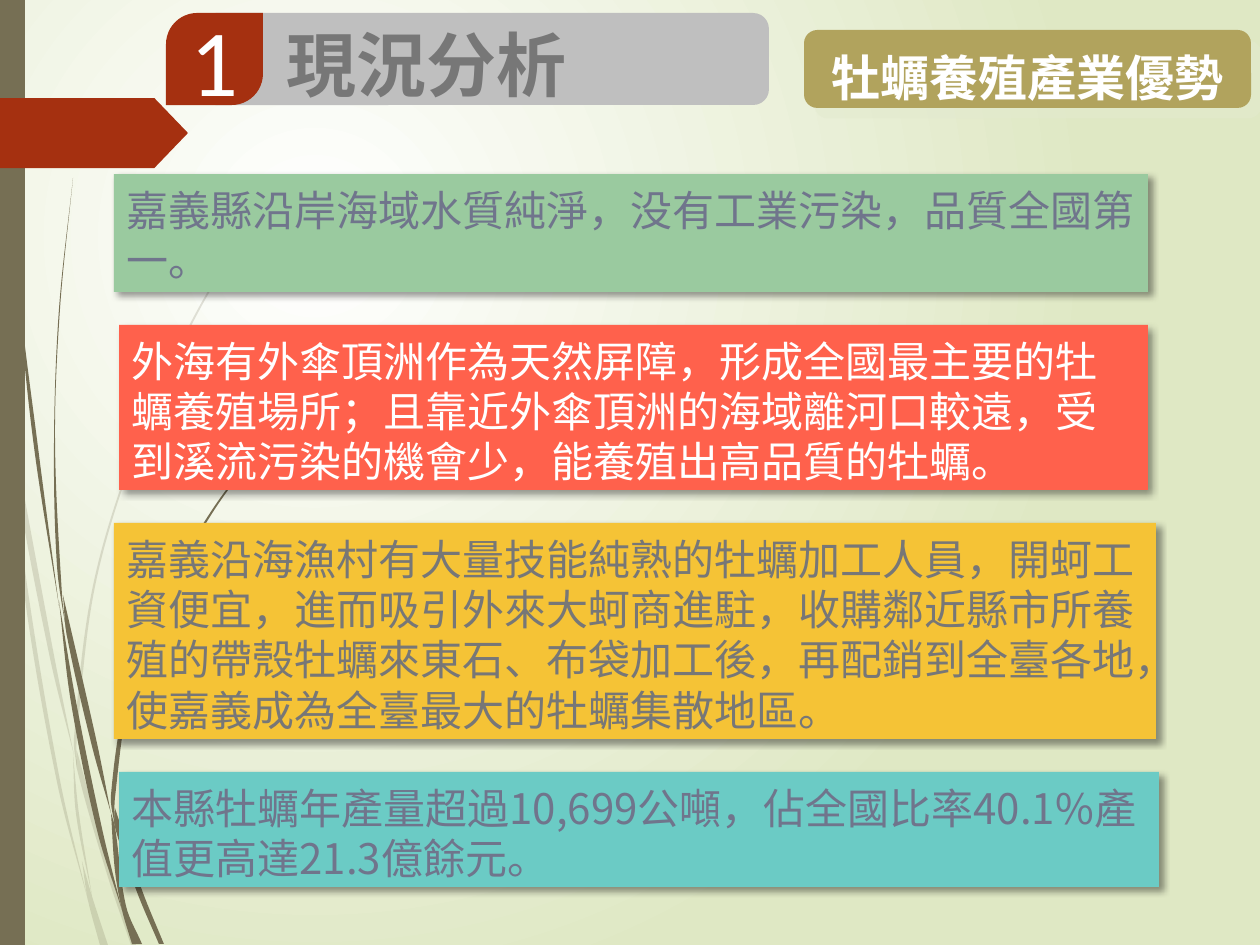
from lxml.etree import SubElement
from pptx import Presentation
from pptx.dml.color import RGBColor
from pptx.enum.shapes import MSO_SHAPE as Shape
from pptx.enum.text import MSO_ANCHOR as Anchor, MSO_AUTO_SIZE as AutoSize, PP_ALIGN as Align
from pptx.oxml.ns import qn
from pptx.util import Pt

PX = 9144000 / 1260
PAGE_W, PAGE_H = 1260, 945
CJK = "Noto Sans CJK SC"
COLORS = {
    "white": "FFFFFF", "mist": "DFE8C4", "olive": "766F54", "rust": "A53010",
    "silver": "BFBFBF", "grey": "777777", "khaki": "B1A35D", "pale": "E3EACF",
    "green": "9ACA9F", "coral": "FF614C", "amber": "F5C336", "teal": "6BCBC5",
    "slate": "70758C", "black": "000000",
}

# (left, top, width, height), fill, text colour, text
ADVANTAGES = [
    ((114, 174, 1034, 118), "green", "slate",
     "嘉義縣沿岸海域水質純淨，没有工業污染，品質全國第一。"),
    ((119, 325, 1029, 165), "coral", "white",
     "外海有外傘頂洲作為天然屏障，形成全國最主要的牡蠣養殖場所；且靠近外傘頂洲的海域離河口較遠，"
     "受到溪流污染的機會少，能養殖出高品質的牡蠣。"),
    ((114, 523, 1042, 216), "amber", "grey",
     "嘉義沿海漁村有大量技能純熟的牡蠣加工人員，開蚵工資便宜，進而吸引外來大蚵商進駐，"
     "收購鄰近縣市所養殖的帶殼牡蠣來東石、布袋加工後，再配銷到全臺各地，使嘉義成為全臺最大的牡蠣集散地區。"),
    ((119, 772, 1040, 115), "teal", "slate",
     "本縣牡蠣年產量超過10,699公噸，佔全國比率40.1%產值更高達21.3億餘元。"),
]

# Each blade of grass is its left edge and its right edge, from top to bottom.
FAINT_GRASS = [
    ([(0, 355), (0, 377), (10, 441)], [(0, 355), (8, 406), (10, 441)]),
    ([(13, 435), (15, 474), (50, 658), (74, 755)], [(13, 435), (54, 655), (74, 755)]),
    ([(77, 751), (77, 769), (107, 874), (131, 945)], [(77, 751), (111, 872), (136, 945)]),
    ([(10, 441), (24, 592), (57, 782), (88, 900)], [(10, 441), (28, 591), (60, 780), (88, 900)]),
    ([(73, 755), (76, 814), (92, 896)], [(73, 755), (79, 814), (92, 896)]),
    ([(273, 193), (199, 307), (139, 438), (94, 581), (74, 738), (77, 769)],
     [(273, 193), (200, 309), (140, 440), (96, 582), (77, 736), (77, 769)]),
    ([(82, 861), (88, 900), (100, 945)], [(82, 861), (92, 896), (108, 945)]),
]
DARK_GRASS = [
    ([(2, 0), (6, 139), (18, 294), (34, 447), (59, 606)],
     [(3, 0), (8, 137), (19, 292), (38, 447), (59, 606)]),
    ([(63, 595), (67, 636), (92, 746), (111, 813)], [(63, 595), (97, 743), (111, 813)]),
    ([(115, 808), (115, 827), (137, 892), (159, 944)], [(115, 808), (142, 890), (164, 944)]),
    ([(59, 601), (71, 702), (97, 830), (122, 910)], [(59, 601), (76, 701), (102, 828), (122, 910)]),
    ([(73, 178), (59, 309), (54, 440), (57, 566), (67, 636)],
     [(73, 178), (60, 309), (55, 440), (62, 595), (67, 636)]),
    ([(271, 433), (212, 510), (163, 597), (127, 694), (111, 795), (115, 827)],
     [(272, 433), (213, 512), (165, 600), (130, 696), (115, 798), (115, 827)]),
    ([(111, 813), (115, 871), (122, 910), (132, 944)], [(111, 813), (115, 827), (126, 906), (142, 944)]),
]


def px(length):
    return round(length * PX)


def rgb(name):
    return RGBColor.from_string(COLORS[name])


def paint(shape, fill):
    shape.fill.solid()
    shape.fill.fore_color.rgb = rgb(fill)
    shape.line.fill.background()
    shape.shadow.inherit = False


def add_block(page, kind, place, fill, adjust=()):
    block = page.shapes.add_shape(kind, *map(px, place))
    for index, value in enumerate(adjust):
        block.adjustments[index] = value
    paint(block, fill)
    return block


def drop_shadow(shape, color, opacity, blur, distance):
    """Cast a shadow to the lower right; blur and distance are in points."""
    effects = shape._element.spPr.find(qn("a:effectLst"))
    shadow = SubElement(effects, qn("a:outerShdw"), blurRad=str(Pt(blur)), dist=str(Pt(distance)),
                        dir="2700000", algn="tl", rotWithShape="0")
    tint = SubElement(shadow, qn("a:srgbClr"), val=COLORS[color])
    SubElement(tint, qn("a:alpha"), val=str(opacity * 1000))


def write(shape, text, size, color, font, bold=False, align=Align.LEFT, top=6):
    """Set CJK text at a line height of 1.2, lowered to keep its glyphs centred."""
    frame = shape.text_frame
    frame.word_wrap, frame.auto_size = True, AutoSize.NONE
    frame.vertical_anchor = Anchor.TOP
    frame.margin_left = frame.margin_right = px(12.5)
    frame.margin_top, frame.margin_bottom = px(top + size * 0.17), 0
    para = frame.paragraphs[0]
    para.alignment, para.line_spacing = align, Pt(size * 1.2)
    span = para.add_run()
    span.text = text
    span.font.size, span.font.bold, span.font.name = Pt(size), bold, font
    span.font.color.rgb = rgb(color)
    SubElement(span._r.rPr, qn("a:ea"), typeface=CJK)


def bend(edge):
    """Return the Bezier points (two controls and an end) of a smooth curve along an edge."""
    knots = [complex(*point) for point in edge]
    ends = [knots[0], *knots, knots[-1]]
    headings = [(after - before) / abs(after - before) for before, after in zip(ends, ends[2:])]
    curves = []
    for i, (start, end) in enumerate(zip(knots, knots[1:])):
        reach = abs(end - start) / 3
        curves.append((start + headings[i] * reach, end - headings[i + 1] * reach, end))
    return curves


def add_grass(page, blades, opacity):
    for left, right in blades:
        back = right[::-1]
        joined = left[-1] == back[0]
        outline = [(px(x), px(y)) for x, y in left + back[joined:]]
        builder = page.shapes.build_freeform(*outline[0])
        builder.add_line_segments(outline[1:], close=True)
        blade = builder.convert_to_shape()
        paint(blade, "olive")
        tint = blade._element.spPr.find(qn("a:solidFill"))[0]
        SubElement(tint, qn("a:alpha"), val=str(opacity * 1000))

        curves = bend(left) + ([] if joined else [None]) + bend(back)
        lines = list(blade._element.iter(qn("a:lnTo")))
        for line, curve in zip(lines, curves):
            if curve:
                line.tag = qn("a:cubicBezTo")
                del line[:]
                for knot in curve:
                    SubElement(line, qn("a:pt"), x=str(px(knot.real) - blade.left),
                               y=str(px(knot.imag) - blade.top))


def set_background(page):
    fill = page.background.fill
    fill.gradient()
    for stop, color in zip(fill.gradient_stops, ("white", "mist")):
        stop.color.rgb = rgb(color)
    gradient = next(page.element.iter(qn("a:gradFill")))
    gradient.remove(gradient.find(qn("a:lin")))
    circle = SubElement(gradient, qn("a:path"), {"path": "circle"})
    SubElement(circle, qn("a:fillToRect"), l="50000", t="50000", r="100000", b="100000")


def main():
    deck = Presentation()
    deck.slide_width, deck.slide_height = px(PAGE_W), px(PAGE_H)
    page = deck.slides.add_slide(deck.slide_layouts[5])
    set_background(page)

    add_grass(page, FAINT_GRASS, 20)
    add_grass(page, DARK_GRASS, 100)
    add_block(page, Shape.RECTANGLE, (0, 0, 25, PAGE_H), "olive")
    add_block(page, Shape.PENTAGON, (0, 98, 188, 70), "rust", [0.48])

    add_block(page, Shape.ROUNDED_RECTANGLE, (200, 13, 569, 92), "silver", [0.17])
    number = add_block(page, Shape.ROUND_2_DIAG_RECTANGLE, (166, 13, 97, 92), "rust", [0.34, 0])
    number.text_frame.vertical_anchor = Anchor.MIDDLE
    para = number.text_frame.paragraphs[0]
    para.alignment = Align.CENTER
    span = para.add_run()
    span.text = "1"
    span.font.size, span.font.name = Pt(54), "Calibri"
    span.font.color.rgb = rgb("white")

    title = page.shapes.title
    title.left, title.top, title.width, title.height = map(px, (274, 9, 376, 97))
    write(title, "現況分析", 40, "grey", "Arial", bold=True)
    page.shapes._spTree.append(title._element)

    badge = add_block(page, Shape.ROUNDED_RECTANGLE, (804, 30, 447, 78), "khaki", [0.17])
    drop_shadow(badge, "pale", 50, 0, 8.5)
    write(badge, "牡蠣養殖產業優勢", 28, "white", "Arial", bold=True, align=Align.CENTER, top=9)

    for place, fill, color, text in ADVANTAGES:
        box = add_block(page, Shape.RECTANGLE, place, fill)
        drop_shadow(box, "black", 40, 4, 3)
        write(box, text, 24, color, CJK)

    deck.save("out.pptx")


if __name__ == "__main__":
    main()
